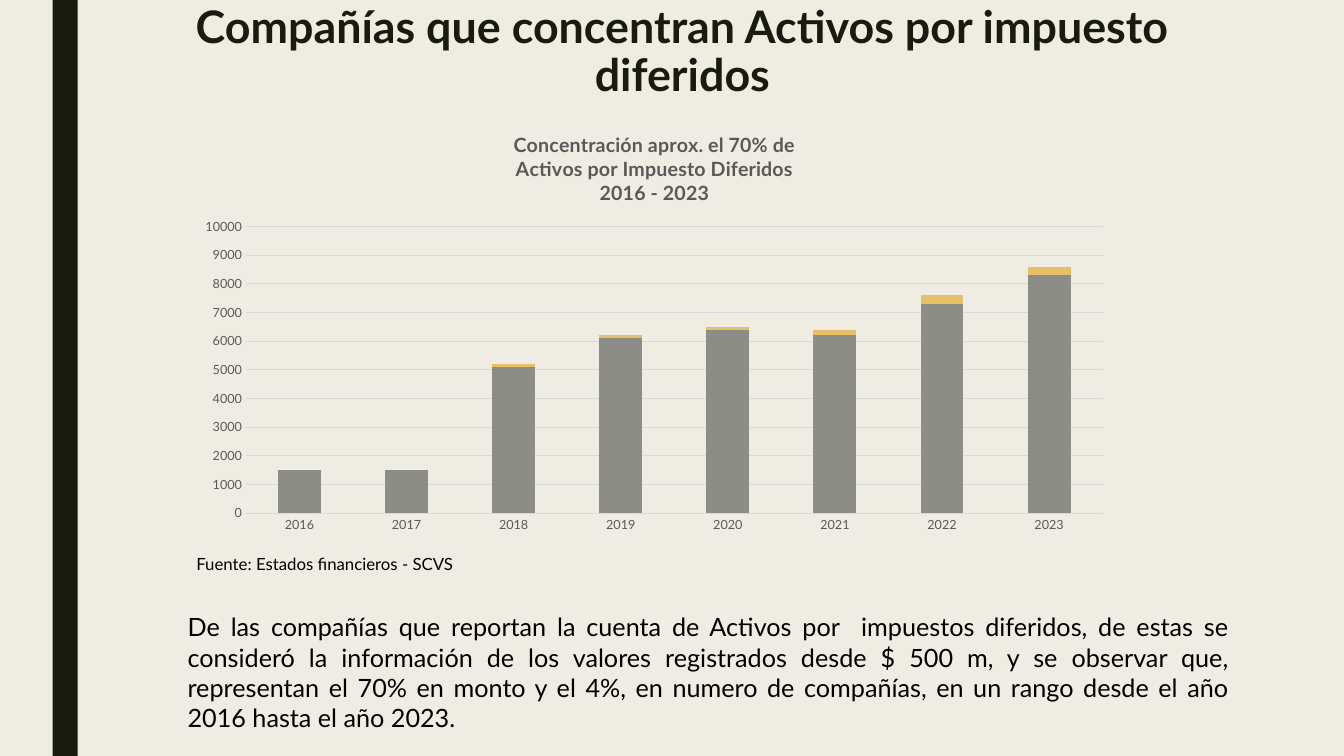
from dataclasses import dataclass

from lxml import etree
from pptx import Presentation
from pptx.chart.data import CategoryChartData
from pptx.dml.color import RGBColor
from pptx.enum.chart import XL_CHART_TYPE, XL_TICK_MARK
from pptx.enum.shapes import MSO_SHAPE
from pptx.enum.text import MSO_ANCHOR, PP_ALIGN
from pptx.oxml.ns import qn
from pptx.util import Pt

STACKED = XL_CHART_TYPE.COLUMN_STACKED
NO_TICKS = XL_TICK_MARK.NONE
RECTANGLE = MSO_SHAPE.RECTANGLE
TOP = MSO_ANCHOR.TOP
LEFT, CENTER, JUSTIFY = PP_ALIGN.LEFT, PP_ALIGN.CENTER, PP_ALIGN.JUSTIFY


@dataclass(frozen=True)
class Theme:
    font: str = "Lato"
    background: str = "EFEDE3"
    dark: str = "191B0E"
    text: str = "000000"
    chart_text: str = "595959"
    grid: str = "D9D9D9"
    series: tuple = ("8C8D86", "E6C069")
    title_size: float = 32
    body_size: float = 18
    chart_title_size: float = 14
    source_size: float = 12
    chart_size: float = 10
    axis_size: float = 9


def rgb(value):
    return RGBColor.from_string(value)


def place(parent, index, **settings):
    """Give a chart part a manual layout; numbers are fractions of the chart."""
    layout = parent.find(qn("c:layout"))
    if layout is None:
        layout = etree.Element(qn("c:layout"))
        parent.insert(index, layout)
    manual = etree.SubElement(layout, qn("c:manualLayout"))
    for name, value in settings.items():
        etree.SubElement(manual, qn(f"c:{name}")).set("val", str(value))


class SlideBuilder:
    def __init__(self, page, theme):
        self.page = page
        self.theme = theme
        fill = page.background.fill
        fill.solid()
        fill.fore_color.rgb = rgb(theme.background)

    def style(self, font, size, color, bold=False):
        font.name = self.theme.font
        font.size = Pt(size)
        font.bold = bold
        font.color.rgb = rgb(color)

    def bar(self, left, top, width, height):
        box = self.page.shapes.add_shape(
            RECTANGLE, Pt(left), Pt(top), Pt(width), Pt(height))
        box.shadow.inherit = False
        box.fill.solid()
        box.fill.fore_color.rgb = rgb(self.theme.dark)
        box.line.fill.background()

    def text(self, words, left, top, width, height, size, color,
             align=LEFT, bold=False, spacing=None):
        box = self.page.shapes.add_textbox(
            Pt(left), Pt(top), Pt(width), Pt(height))
        frame = box.text_frame
        frame.word_wrap = True
        frame.vertical_anchor = TOP
        para = frame.paragraphs[0]
        para.text = words
        para.alignment = align
        para.line_spacing = spacing
        self.style(para.font, size, color, bold)

    def column_chart(self, title, data, left, top, width, height):
        theme = self.theme
        chart = self.page.shapes.add_chart(
            STACKED, Pt(left), Pt(top), Pt(width), Pt(height), data).chart
        self.style(chart.font, theme.chart_size, theme.text)
        chart.has_legend = False

        chart.has_title = True
        heading = chart.chart_title
        heading.include_in_layout = False
        heading.text_frame.text = title
        for para in heading.text_frame.paragraphs:
            para.alignment = CENTER
            self.style(para.font, theme.chart_title_size, theme.chart_text, True)
        place(heading._element, 1, xMode="edge", yMode="edge",
              x=231.5 / width, y=9.7 / height)

        plot = chart.plots[0]
        plot.gap_width = 150
        plot.overlap = 100
        plot.vary_by_categories = False
        for series, color in zip(plot.series, theme.series):
            series.format.fill.solid()
            series.format.fill.fore_color.rgb = rgb(color)
        place(chart._chartSpace.chart.plotArea, 0, layoutTarget="inner",
              xMode="edge", yMode="edge", x=42.5 / width, y=80.4 / height,
              w=612 / width, h=204.8 / height)

        values, categories = chart.value_axis, chart.category_axis
        for axis in (values, categories):
            axis.major_tick_mark = axis.minor_tick_mark = NO_TICKS
            self.style(axis.tick_labels.font, theme.axis_size, theme.chart_text)
        values.minimum_scale = 0
        values.maximum_scale = 10000
        values.major_unit = 1000
        values.format.line.fill.background()
        for line in (categories.format.line, values.major_gridlines.format.line):
            line.color.rgb = rgb(theme.grid)
            line.width = Pt(0.75)


def main():
    deck = Presentation()
    deck.slide_width, deck.slide_height = Pt(960), Pt(540)
    theme = Theme()
    slide = SlideBuilder(deck.slides.add_slide(deck.slide_layouts[6]), theme)

    slide.bar(37.5, 0, 18, 540)
    slide.text("Compañías que concentran Activos por impuesto diferidos",
               73.5, 0, 828, 104.4, theme.title_size, theme.dark,
               CENTER, bold=True, spacing=0.89)
    slide.text("Fuente: Estados financieros - SCVS",
               133.2, 391.7, 450, 21.6, theme.source_size, theme.text)
    slide.text("De las compañías que reportan la cuenta de Activos por  impuestos "
               "diferidos, de estas se consideró la información de los valores "
               "registrados desde $ 500 m, y se observar que, representan el 70% "
               "en monto y el 4%, en numero de compañías, en un rango desde el "
               "año 2016 hasta el año 2023.",
               126.9, 433.4, 758, 94.3, theme.body_size, theme.text, JUSTIFY)

    data = CategoryChartData()
    data.categories = [str(year) for year in range(2016, 2024)]
    data.add_series("Series 1", (1500, 1500, 5100, 6100, 6400, 6200, 7300, 8300))
    data.add_series("Series 2", (0, 0, 100, 100, 100, 200, 300, 300))
    slide.column_chart("Concentración aprox. el 70% de\n"
                       "Activos por Impuesto Diferidos\n2016 - 2023",
                       data, 133.2, 81.4, 667.4, 305.3)
    deck.save("out.pptx")


if __name__ == "__main__":
    main()
